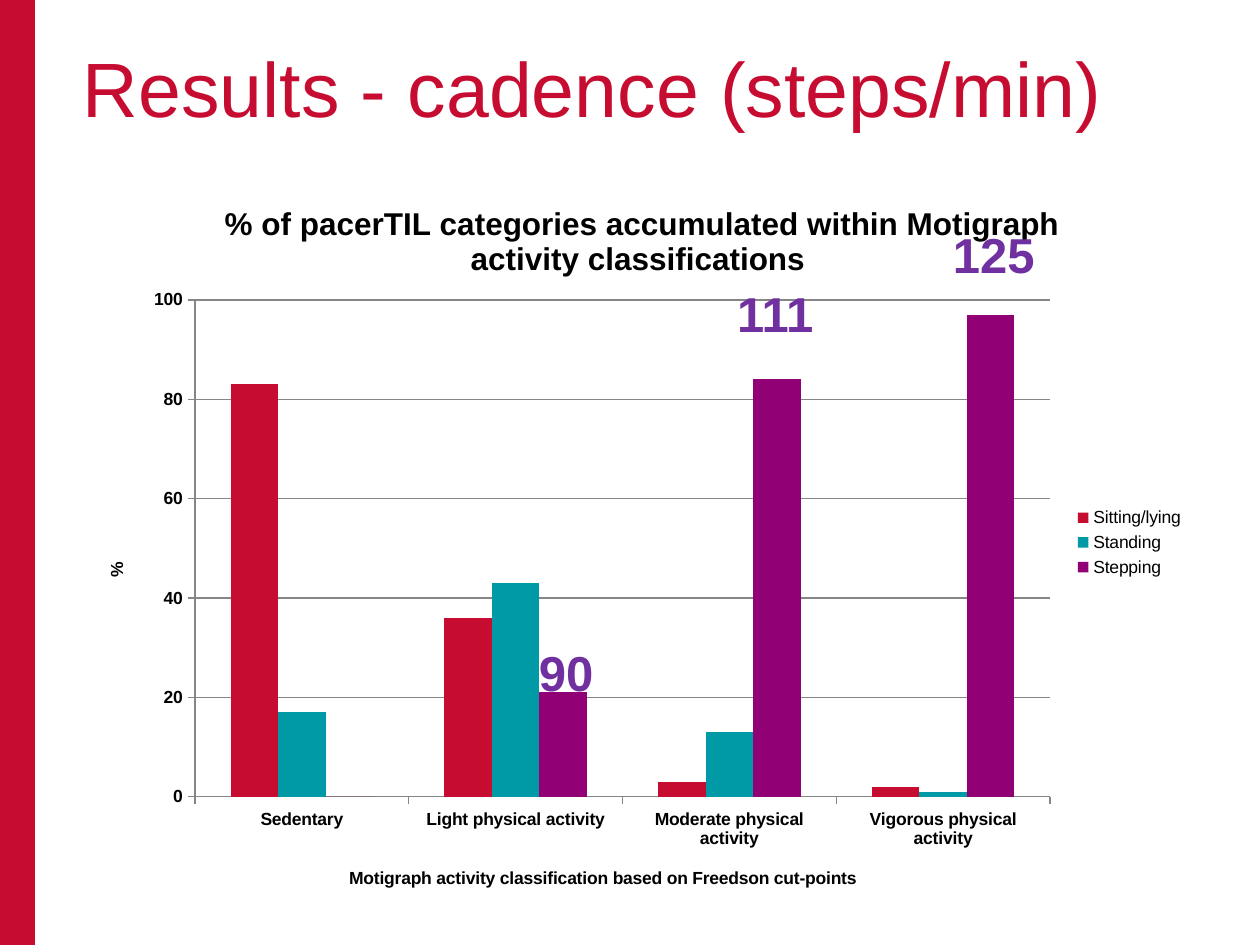
from lxml.etree import SubElement
from pptx import Presentation
from pptx.chart.data import CategoryChartData
from pptx.dml.color import RGBColor
from pptx.enum.chart import XL_CHART_TYPE, XL_LEGEND_POSITION, XL_TICK_MARK
from pptx.enum.shapes import MSO_SHAPE
from pptx.enum.text import MSO_ANCHOR
from pptx.oxml.ns import qn
from pptx.util import Emu, Pt

RED, BLACK, GREY, VIOLET = "C60C30", "000000", "868686", "7030A0"
CATS = ["Sedentary", "Light physical activity",
        "Moderate physical activity", "Vigorous physical activity"]
SERIES = [("Sitting/lying", RED, (83, 36, 3, 2)),
          ("Standing", "009AA6", (17, 43, 13, 1)),
          ("Stepping", "920075", (0, 21, 84, 97))]
MARKS = [("90", (527, 636, 100, 72)), ("125", (941, 218, 159, 72)),
         ("111", (725, 277, 131, 72))]


def px(n):
    """Turn pixels into EMU."""
    return Emu(round(n * 914400 / 126))


def color(code):
    """Turn a hex string into a colour."""
    return RGBColor.from_string(code)


def assign(item, values):
    """Set each attribute in a dict of format values."""
    for name, value in values.items():
        setattr(item, name, value)


def style(font, size, code, bold=False):
    """Give a font its face, size, weight and colour."""
    assign(font, {"name": "Arial", "size": Pt(size), "bold": bold})
    font.color.rgb = color(code)


def paint(fill, code):
    """Fill with one plain colour."""
    fill.solid()
    fill.fore_color.rgb = color(code)


def place(parent, after, box, part, inner=False):
    """Lay a chart part out at px lengths within the chart's box."""
    for old in parent.findall(qn("c:layout")):
        parent.remove(old)
    layout = SubElement(parent, qn("c:layout"))
    manual = SubElement(layout, qn("c:manualLayout"))
    values = {"layoutTarget": "inner"} if inner else {}
    values.update(xMode="edge", yMode="edge")
    for tag, length, whole in zip("xywh", part, box[2:] * 2):
        values[tag] = length / whole
    for tag, value in values.items():
        SubElement(manual, qn("c:" + tag)).set("val", str(value))
    if after is None:
        parent.insert(0, layout)
    else:
        after.addnext(layout)


def band(slide, box):
    """Draw the coloured side band."""
    shape = slide.shapes.add_shape(MSO_SHAPE.RECTANGLE, *map(px, box))
    shape.shadow.inherit = False
    paint(shape.fill, RED)
    shape.line.fill.background()


def label(slide, box, text, size, code, bold=False):
    """Write one line of text at the top left of its box."""
    frame = slide.shapes.add_textbox(*map(px, box)).text_frame
    assign(frame, {"word_wrap": True, "vertical_anchor": MSO_ANCHOR.TOP,
                   "margin_left": px(12), "margin_top": px(6)})
    run = frame.paragraphs[0].add_run()
    run.text = text
    style(run.font, size, code, bold)


def head(owner, text, size):
    """Give a chart or an axis its bold title."""
    owner.has_title = True
    title = owner.axis_title if hasattr(owner, "axis_title") else owner.chart_title
    title.text_frame.text = text
    style(title.text_frame.paragraphs[0].runs[0].font, size, BLACK, True)
    return title


def axis(item, text, box, spot):
    """Format an axis and set its title at a spot in the chart."""
    assign(item, {"major_tick_mark": XL_TICK_MARK.OUTSIDE,
                  "minor_tick_mark": XL_TICK_MARK.NONE})
    style(item.tick_labels.font, 10, BLACK, True)
    item.format.line.color.rgb = color(GREY)
    node = head(item, text, 10)._element
    place(node, node.find(qn("c:tx")), box, spot)


def graph(slide, box):
    """Draw the clustered columns with axes, title and legend."""
    data = CategoryChartData()
    data.categories = CATS
    for name, _, values in SERIES:
        data.add_series(name, values)
    chart = slide.shapes.add_chart(
        XL_CHART_TYPE.COLUMN_CLUSTERED, *map(px, box), data).chart
    style(chart.font, 10, BLACK)
    title = head(chart, "% of pacerTIL categories accumulated within Motigraph "
                        "activity classifications ", 18)
    title.include_in_layout = False
    node = title._element
    place(node, node.find(qn("c:tx")), box, (140, 26))
    plot = chart.plots[0]
    assign(plot, {"gap_width": 150, "overlap": 0, "vary_by_categories": False})
    for series, (_, code, _) in zip(plot.series, SERIES):
        paint(series.format.fill, code)
    axis(chart.category_axis,
         "Motigraph activity classification based on Freedson cut-points",
         box, (267, 692))
    scale = chart.value_axis
    axis(scale, "%", box, (23, 388))
    assign(scale, {"minimum_scale": 0, "maximum_scale": 100, "major_unit": 20,
                   "has_major_gridlines": True})
    scale.major_gridlines.format.line.color.rgb = color(GREY)
    chart.has_legend = True
    assign(chart.legend, {"position": XL_LEGEND_POSITION.RIGHT,
                          "include_in_layout": False})
    style(chart.legend.font, 10, BLACK)
    area = chart._chartSpace.chart.plotArea
    place(area, None, box, (116, 129, 855, 497), True)


def main():
    """Build the results slide and save it."""
    deck = Presentation()
    assign(deck, {"slide_width": px(1260), "slide_height": px(945)})
    slide = deck.slides.add_slide(deck.slide_layouts[6])
    band(slide, (0, 0, 35, 945))
    graph(slide, (79, 171, 1118, 743))
    label(slide, (71, 35, 1126, 163), "Results - cadence (steps/min)", 44, RED)
    for text, box in MARKS:
        label(slide, box, text, 28, VIOLET, True)
    deck.save("out.pptx")


if __name__ == "__main__":
    main()
